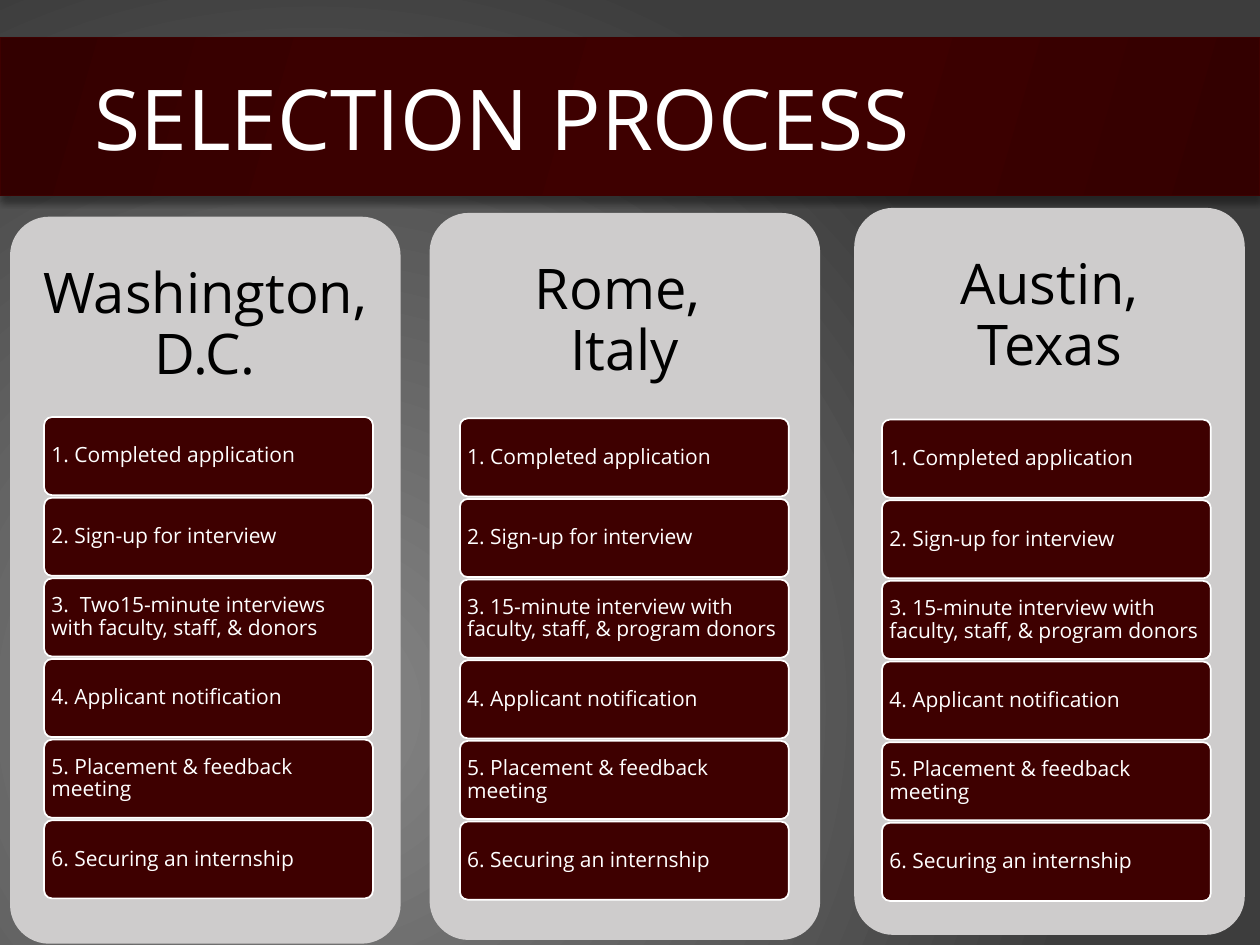
import pptx
import pptx.dml.color
import pptx.enum.shapes
import pptx.enum.text
import pptx.oxml
import pptx.oxml.ns
import pptx.util

Inches = pptx.util.Inches
Pt = pptx.util.Pt
SHAPE = pptx.enum.shapes.MSO_SHAPE
ALIGN = pptx.enum.text.PP_ALIGN
qn = pptx.oxml.ns.qn
nsdecls = pptx.oxml.ns.nsdecls

COLORS = {
    "maroon": "3E0000", "maroon_mid": "3B0000", "maroon_dark": "330000",
    "card": "CECCCC", "white": "FFFFFF", "black": "000000",
    "gray_light": "878787", "gray_dark": "3D3D3D",
}
FONT = "Open Sans"

# Card left and top, first step left and top, heading lines, third step
CITIES = [
    (0.08, 1.72, 0.35, 3.31, ["Washington, D.C."],
     "3.  Two15-minute interviews with faculty, staff, & donors"),
    (3.41, 1.69, 3.65, 3.32, ["Rome, ", "Italy"],
     "3. 15-minute interview with faculty, staff, & program donors"),
    (6.78, 1.65, 7.0, 3.33, ["Austin,", "Texas"],
     "3. 15-minute interview with faculty, staff, & program donors"),
]
CARD_SIZE = (3.1, 5.77)
HEADING_HEIGHT = 1.73
STEP_SIZE = (2.61, 0.62)
STEP_PITCH = 0.64


def rgb(name):
    return pptx.dml.color.RGBColor.from_string(COLORS[name])


class SlideBuilder:
    def __init__(self, slide):
        self.slide = slide

    def gradient(self, parent, stops, direction):
        """Swap the solid fill of an element for a gradient."""
        stop_xml = "".join(
            f'<a:gs pos="{pos * 1000}"><a:srgbClr val="{COLORS[name]}"/></a:gs>'
            for pos, name in stops)
        fill = pptx.oxml.parse_xml(
            f'<a:gradFill {nsdecls("a")} rotWithShape="1">'
            f'<a:gsLst>{stop_xml}</a:gsLst>{direction}</a:gradFill>')
        parent.replace(parent.find(qn("a:solidFill")), fill)

    def background(self, stops):
        self.slide.background.fill.solid()
        properties = self.slide.element.find(".//" + qn("p:bgPr"))
        self.gradient(properties, stops,
                      '<a:path path="circle"><a:fillToRect l="50000" t="100000" '
                      'r="100000" b="50000"/></a:path>')

    def box(self, kind, left, top, size, fill, line=None, weight=1):
        shape = self.slide.shapes.add_shape(
            kind, Inches(left), Inches(top), *map(Inches, size))
        shape.shadow.inherit = False
        shape.fill.solid()
        shape.fill.fore_color.rgb = rgb(fill)
        if line:
            shape.line.color.rgb = rgb(line)
            shape.line.width = Pt(weight)
        else:
            shape.line.fill.background()
        if kind == SHAPE.ROUNDED_RECTANGLE:
            shape.adjustments[0] = 0.1
        return shape

    def banner(self, top, size, stops):
        band = self.box(SHAPE.RECTANGLE, 0, top, size, "maroon", "maroon", 0.75)
        properties = band.element.spPr
        self.gradient(properties, stops, '<a:lin ang="960000" scaled="0"/>')
        properties.find(qn("a:effectLst")).append(pptx.oxml.parse_xml(
            f'<a:outerShdw {nsdecls("a")} blurRad="{Pt(4)}" dist="{Pt(3.3)}" '
            f'dir="5400000" rotWithShape="0"><a:srgbClr val="{COLORS["black"]}">'
            '<a:alpha val="40000"/></a:srgbClr></a:outerShdw>'))

    def set_text(self, shape, lines, size, color, insets, align=ALIGN.LEFT,
                 spacing=0.9):
        frame = shape.text_frame
        frame.word_wrap = True
        frame.vertical_anchor = pptx.enum.text.MSO_ANCHOR.MIDDLE
        frame.margin_left = frame.margin_right = Inches(insets[0])
        frame.margin_top = frame.margin_bottom = Inches(insets[1])
        paragraph = frame.paragraphs[0]
        paragraph.alignment = align
        paragraph.line_spacing = spacing
        for index, line in enumerate(lines):
            if index:
                paragraph.add_line_break()
            run = paragraph.add_run()
            run.text = line
            run.font.name = FONT
            run.font.size = Pt(size)
            run.font.color.rgb = rgb(color)

    def label(self, left, top, size, lines, points, color, insets, **style):
        holder = self.slide.shapes.add_textbox(
            Inches(left), Inches(top), *map(Inches, size))
        self.set_text(holder, lines, points, color, insets, **style)

    def step(self, left, top, text):
        tile = self.box(SHAPE.ROUNDED_RECTANGLE, left, top, STEP_SIZE,
                        "maroon", "white")
        self.set_text(tile, [text], 12, "white", (0.04, 0.03))


def main():
    deck = pptx.Presentation()
    deck.slide_width, deck.slide_height = Inches(10), Inches(7.5)
    builder = SlideBuilder(deck.slides.add_slide(deck.slide_layouts[6]))

    # Backdrop and title band
    builder.background([(0, "gray_light"), (100, "gray_dark")])
    builder.banner(0.3, (10, 1.25), [
        (0, "maroon_dark"), (30, "maroon_mid"), (45, "maroon"),
        (55, "maroon"), (73, "maroon_mid"), (100, "maroon_dark")])
    builder.label(0.75, 0.3, (8.5, 1.25), ["SELECTION PROCESS"], 48, "white",
                  (0, 0.05), spacing=1.0)

    # One card of steps per city
    for card_left, card_top, step_left, step_top, heading, interview in CITIES:
        builder.box(SHAPE.ROUNDED_RECTANGLE, card_left, card_top, CARD_SIZE, "card")
        builder.label(card_left, card_top, (CARD_SIZE[0], HEADING_HEIGHT), heading,
                      32, "black", (0.16, 0.16), align=ALIGN.CENTER)
        steps = ["1. Completed application", "2. Sign-up for interview", interview,
                 "4. Applicant notification", "5. Placement & feedback meeting",
                 "6. Securing an internship"]
        for index, step in enumerate(steps):
            builder.step(step_left, step_top + index * STEP_PITCH, step)

    deck.save("out.pptx")


if __name__ == "__main__":
    main()
